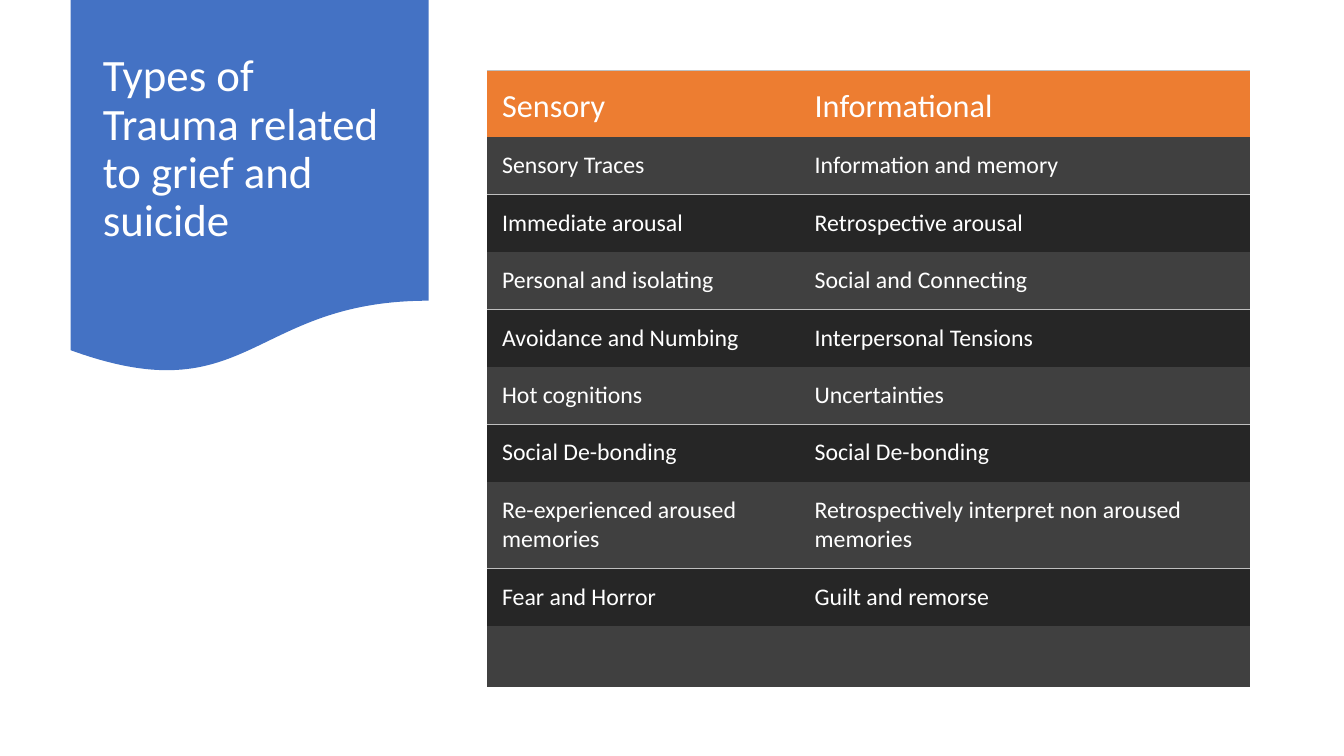
from dataclasses import dataclass

from lxml import etree
from pptx import Presentation
from pptx.dml.color import RGBColor as RGB
from pptx.enum.shapes import MSO_SHAPE as SHAPE
from pptx.enum.text import MSO_ANCHOR as ANCHOR, MSO_AUTO_SIZE as AUTO, PP_ALIGN as ALIGN
from pptx.oxml.ns import qn
from pptx.util import Emu, Pt

PX = 9144  # 100 px to the inch
NO_STYLE = "{2D5ABB26-0587-4C30-8999-92F81FD0307C}"


@dataclass(frozen=True)
class Theme:
    font: str = "Calibri"
    title_size: int = 32
    head_size: int = 23
    body_size: int = 17
    white: str = "FFFFFF"
    banner: str = "4472C4"
    head: str = "ED7D31"
    light_band: str = "404040"
    dark_band: str = "262626"
    rule: str = "BFBFBF"


THEME = Theme()

COLUMN_WIDTHS = [310, 447]
HEAD_HEIGHT, ROW_HEIGHT, TALL_HEIGHT, LAST_HEIGHT = 66, 57, 86, 61
HEADINGS = ("Sensory", "Informational")
TRAUMA_TYPES = [
    ("Sensory Traces", "Information and memory"),
    ("Immediate arousal", "Retrospective arousal"),
    ("Personal and isolating", "Social and Connecting"),
    ("Avoidance and Numbing", "Interpersonal Tensions"),
    ("Hot cognitions", "Uncertainties"),
    ("Social De-bonding", "Social De-bonding"),
    ("Re-experienced aroused memories", "Retrospectively interpret non aroused memories"),
    ("Fear and Horror", "Guilt and remorse"),
    ("", ""),
]
TALL_ROW = 7


def px(n):
    return Emu(n * PX)


def box(*lengths):
    return [px(n) for n in lengths]


def paint(fill, color):
    fill.solid()
    fill.fore_color.rgb = RGB.from_string(color)


def style(p, size):
    p.font.name = THEME.font
    p.font.size = Pt(size)
    p.font.bold = False
    p.font.color.rgb = RGB.from_string(THEME.white)


def add_banner(s):
    sp = s.shapes.add_shape(SHAPE.FLOWCHART_DOCUMENT, *box(70, 0, 355, 372))
    sp.shadow.inherit = False
    paint(sp.fill, THEME.banner)
    sp.line.fill.background()


def set_title(s, text):
    title = s.shapes.title
    title.left, title.top, title.width, title.height = box(92, 19, 311, 259)
    tf = title.text_frame
    tf.text = text
    tf.word_wrap = True
    tf.auto_size = AUTO.NONE
    tf.vertical_anchor = ANCHOR.MIDDLE
    p = tf.paragraphs[0]
    p.alignment = ALIGN.LEFT
    p.line_spacing = 0.9
    style(p, THEME.title_size)
    # Bring the title in front of the banner
    s.shapes._spTree.append(title._element)


def add_border(cell, side):
    ln = etree.Element(qn(f"a:{side}"), w=str(Pt(1)))
    fill = etree.SubElement(ln, qn("a:solidFill"))
    etree.SubElement(fill, qn("a:srgbClr"), val=THEME.rule)
    cell._tc.get_or_add_tcPr().insert(0, ln)


def fill_cell(cell, text, color, size):
    cell.margin_left = cell.margin_right = px(15)
    cell.margin_top, cell.margin_bottom = px(14), px(8)
    paint(cell.fill, color)
    cell.text = text
    style(cell.text_frame.paragraphs[0], size)


def add_trauma_table(s):
    rows = [HEADINGS, *TRAUMA_TYPES]
    last = len(rows) - 1
    heights = [ROW_HEIGHT] * len(rows)
    heights[0], heights[TALL_ROW], heights[last] = HEAD_HEIGHT, TALL_HEIGHT, LAST_HEIGHT

    frame = s.shapes.add_table(
        len(rows), len(HEADINGS), *box(483, 70, sum(COLUMN_WIDTHS), sum(heights)))
    table = frame.table
    table.horz_banding = False
    table._tbl.tblPr.find(qn("a:tableStyleId")).text = NO_STYLE
    for column, width in zip(table.columns, COLUMN_WIDTHS):
        column.width = px(width)

    for i, (texts, height) in enumerate(zip(rows, heights)):
        table.rows[i].height = px(height)
        light = i % 2 == 1
        for cell, text in zip(table.rows[i].cells, texts):
            if i == 0:
                fill_cell(cell, text, THEME.head, THEME.head_size)
                cell.vertical_anchor = ANCHOR.MIDDLE
                add_border(cell, "lnT")
            else:
                band = THEME.light_band if light else THEME.dark_band
                fill_cell(cell, text, band, THEME.body_size)
            # A thin rule closes each light row but the last
            if light and i < last:
                add_border(cell, "lnB")


def main():
    prs = Presentation()
    prs.slide_width, prs.slide_height = box(1333, 750)
    s = prs.slides.add_slide(prs.slide_layouts[5])
    # Left banner with the title
    add_banner(s)
    set_title(s, "Types of Trauma related to grief and suicide")
    # Comparison table
    add_trauma_table(s)
    prs.save("out.pptx")


if __name__ == "__main__":
    main()
